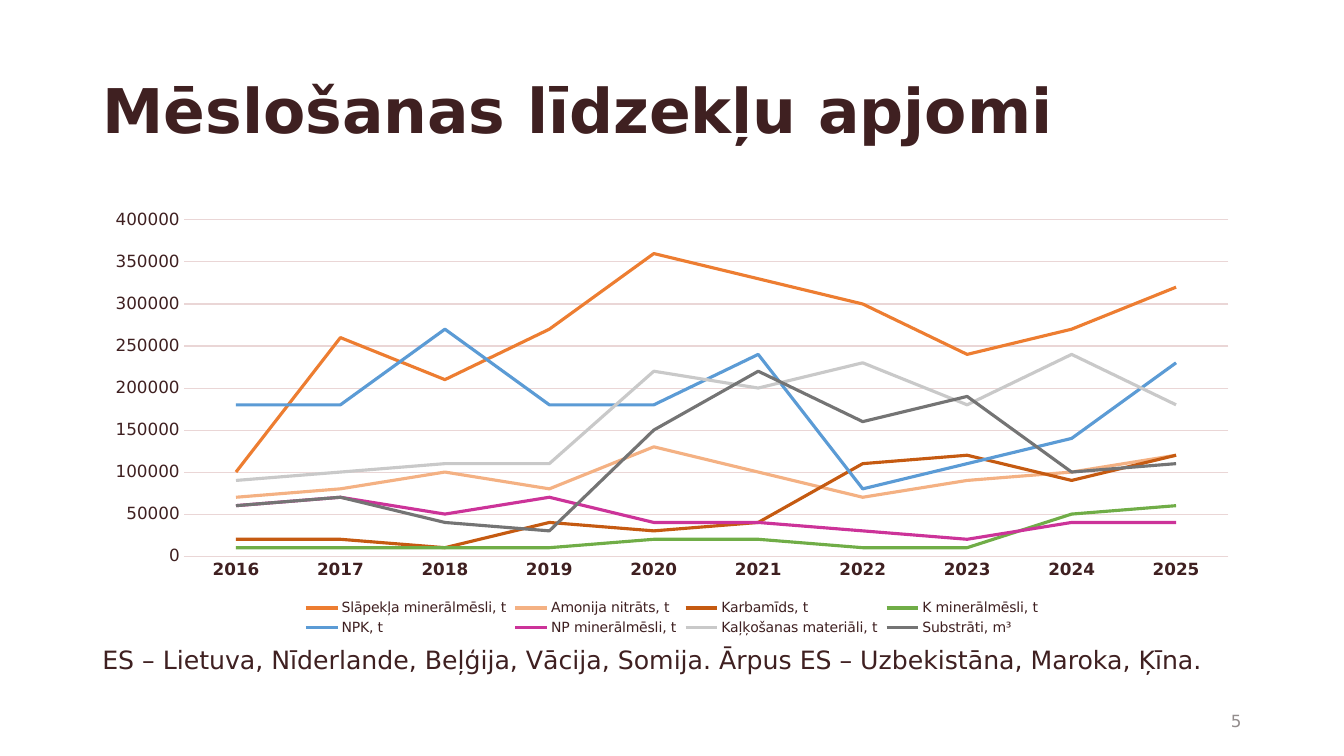
from pptx import Presentation
from pptx.chart.data import CategoryChartData
from pptx.dml.color import RGBColor
from pptx.enum.chart import XL_CHART_TYPE, XL_LEGEND_POSITION, XL_TICK_MARK
from pptx.enum.text import MSO_ANCHOR, MSO_AUTO_SIZE, PP_ALIGN
from pptx.util import Cm, Pt

LINE = XL_CHART_TYPE.LINE
BOTTOM = XL_LEGEND_POSITION.BOTTOM
NO_TICK = XL_TICK_MARK.NONE
TOP, MIDDLE = MSO_ANCHOR.TOP, MSO_ANCHOR.MIDDLE
GROW, FIXED = MSO_AUTO_SIZE.SHAPE_TO_FIT_TEXT, MSO_AUTO_SIZE.NONE
LEFT, RIGHT = PP_ALIGN.LEFT, PP_ALIGN.RIGHT

DARK = RGBColor(0x3F, 0x20, 0x21)
MUTED = RGBColor(0x93, 0x8D, 0x8D)
PALE = RGBColor(0xEA, 0xD6, 0xD6)
ORANGE = RGBColor(0xED, 0x7D, 0x31)
PEACH = RGBColor(0xF4, 0xB1, 0x83)
RUST = RGBColor(0xC5, 0x5A, 0x11)
GREEN = RGBColor(0x70, 0xAD, 0x47)
BLUE = RGBColor(0x5B, 0x9B, 0xD5)
PINK = RGBColor(0xCC, 0x33, 0x99)
SILVER = RGBColor(0xC9, 0xC9, 0xC9)
GREY = RGBColor(0x74, 0x74, 0x74)

YEARS = [str(year) for year in range(2016, 2026)]
# Name, line colour, yearly amounts in thousands
SERIES = [
    ("Slāpekļa minerālmēsli, t", ORANGE,
     [100, 260, 210, 270, 360, 330, 300, 240, 270, 320]),
    ("Amonija nitrāts, t", PEACH,
     [70, 80, 100, 80, 130, 100, 70, 90, 100, 120]),
    ("Karbamīds, t", RUST,
     [20, 20, 10, 40, 30, 40, 110, 120, 90, 120]),
    ("K minerālmēsli, t", GREEN,
     [10, 10, 10, 10, 20, 20, 10, 10, 50, 60]),
    ("NPK, t", BLUE,
     [180, 180, 270, 180, 180, 240, 80, 110, 140, 230]),
    ("NP minerālmēsli, t", PINK,
     [60, 70, 50, 70, 40, 40, 30, 20, 40, 40]),
    ("Kaļķošanas materiāli, t", SILVER,
     [90, 100, 110, 110, 220, 200, 230, 180, 240, 180]),
    ("Substrāti, m³", GREY,
     [60, 70, 40, 30, 150, 220, 160, 190, 100, 110]),
]
EDGE, WIDTH = 2.33, 29.21


class Sheet:
    """Holds the text style and the slide being filled."""

    base = {"name": "DejaVu Sans", "bold": False}

    def __init__(self, slide):
        self.slide = slide

    def style(self, font, size, color=DARK, **extra):
        for key, value in {**self.base, "size": Pt(size), **extra}.items():
            setattr(font, key, value)
        font.color.rgb = color

    def stroke(self, line, color, width):
        line.color.rgb = color
        line.width = Pt(width)

    def text(self, words, area, size, color=DARK, bold=False,
             anchor=TOP, align=LEFT, fit=FIXED, spacing=1.0):
        frame = self.slide.shapes.add_textbox(*map(Cm, area)).text_frame
        form = {"word_wrap": True, "auto_size": fit, "vertical_anchor": anchor}
        for key, value in form.items():
            setattr(frame, key, value)
        para = frame.paragraphs[0]
        para.alignment, para.line_spacing = align, spacing
        run = para.add_run()
        run.text = words
        self.style(run.font, size, color, bold=bold)

    def axis(self, axis, bold=False):
        axis.major_tick_mark = axis.minor_tick_mark = NO_TICK
        self.style(axis.tick_labels.font, 12, bold=bold)

    def chart(self, area):
        data = CategoryChartData(number_format="0")
        data.categories = YEARS
        for name, _, amounts in SERIES:
            data.add_series(name, [1000 * amount for amount in amounts])
        chart = self.slide.shapes.add_chart(LINE, *map(Cm, area), data).chart
        chart.has_title = False
        self.style(chart.font, 12)

        years, amounts = chart.category_axis, chart.value_axis
        self.axis(years, bold=True)
        self.stroke(years.format.line, PALE, 0.75)
        self.axis(amounts)
        amounts.minimum_scale, amounts.maximum_scale = 0, 400000
        amounts.major_unit = 50000
        amounts.format.line.fill.background()
        self.stroke(amounts.major_gridlines.format.line, PALE, 0.75)

        chart.has_legend = True
        chart.legend.position = BOTTOM
        chart.legend.include_in_layout = False
        self.style(chart.legend.font, 10)

        plot = chart.plots[0]
        plot.vary_by_categories = False
        for series, (_, color, _) in zip(plot.series, SERIES):
            series.smooth = False
            self.stroke(series.format.line, color, 2.25)


def main():
    deck = Presentation()
    deck.slide_width, deck.slide_height = Cm(33.87), Cm(19.05)
    sheet = Sheet(deck.slides.add_slide(deck.slide_layouts[6]))
    sheet.text("Mēslošanas līdzekļu apjomi", (EDGE, 1.01, WIDTH, 3.68), 44,
               bold=True, anchor=MIDDLE, spacing=0.9)
    sheet.chart((EDGE, 5.07, WIDTH, 11.05))
    sheet.text("ES – Lietuva, Nīderlande, Beļģija, Vācija, Somija. "
               "Ārpus ES – Uzbekistāna, Maroka, Ķīna.",
               (EDGE, 16.1, WIDTH, 1.03), 18, fit=GROW)
    sheet.text("5", (23.92, 17.66, 7.62, 1.01), 12, MUTED,
               anchor=MIDDLE, align=RIGHT)
    deck.save("out.pptx")


if __name__ == "__main__":
    main()
